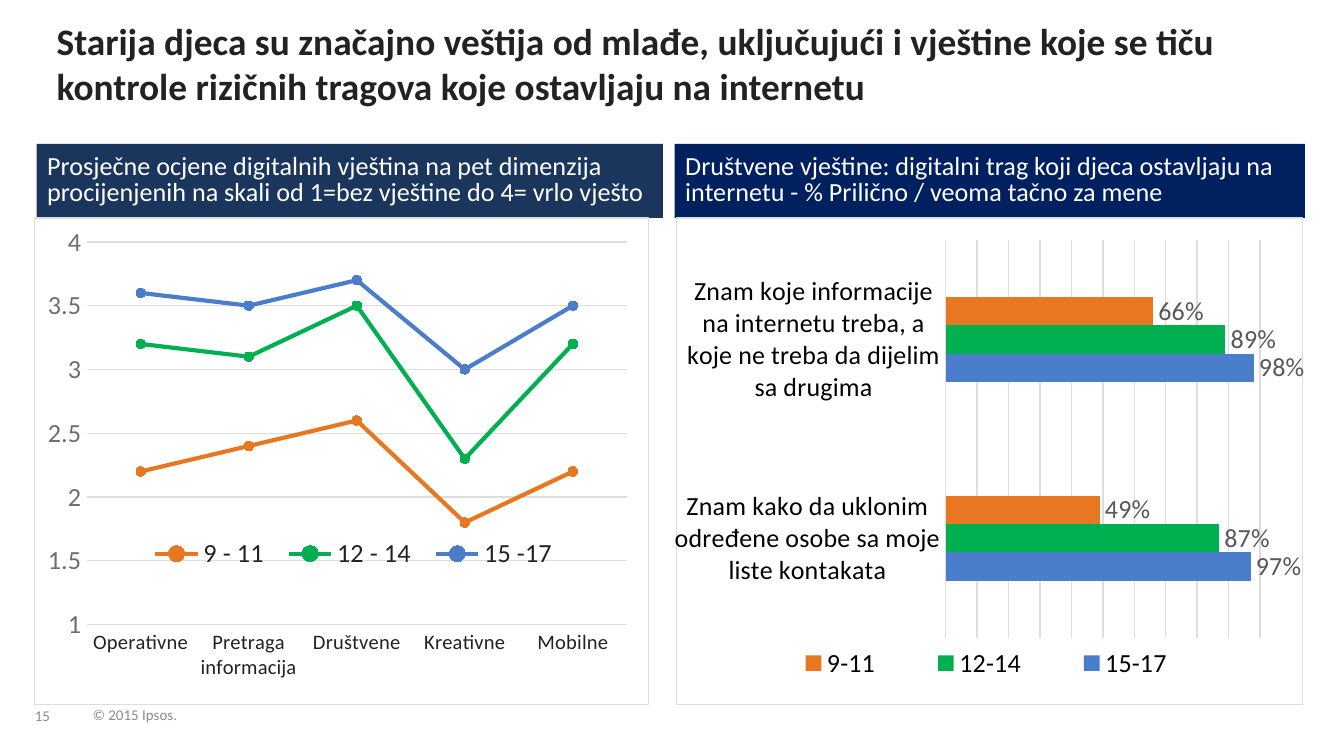
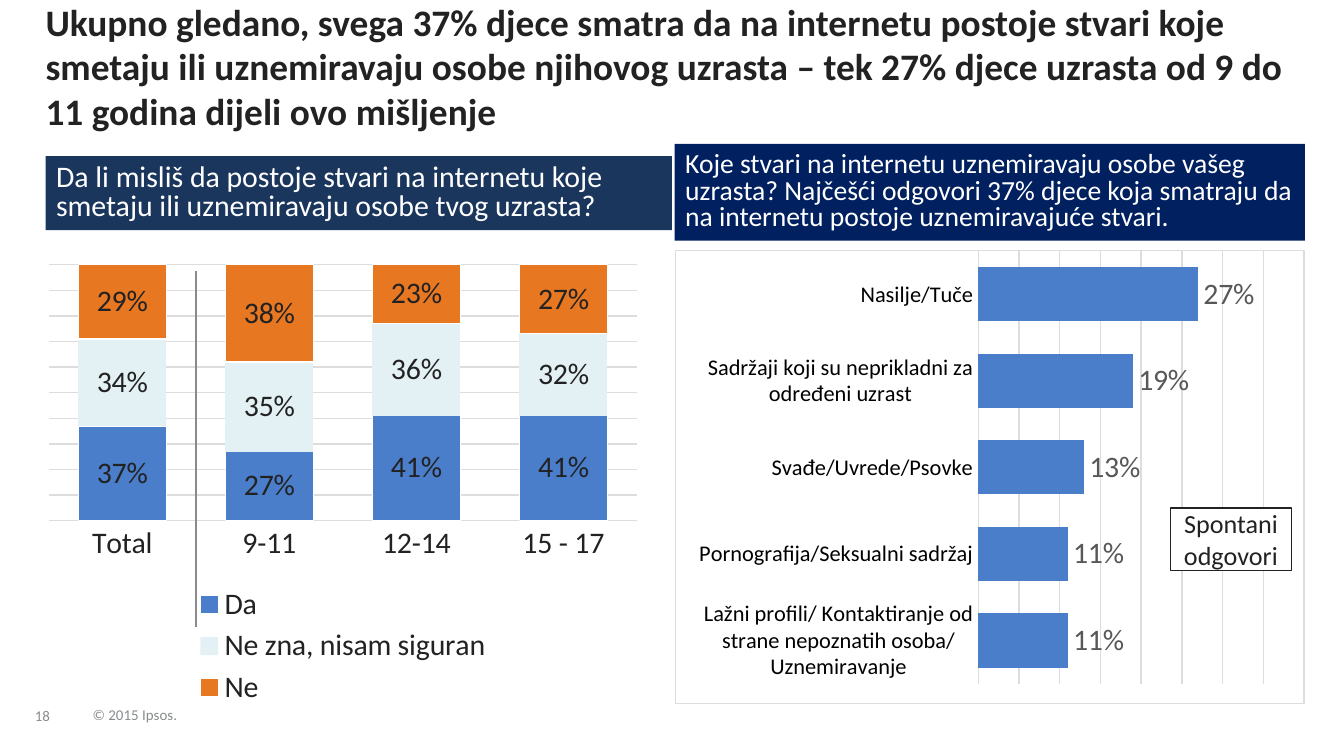
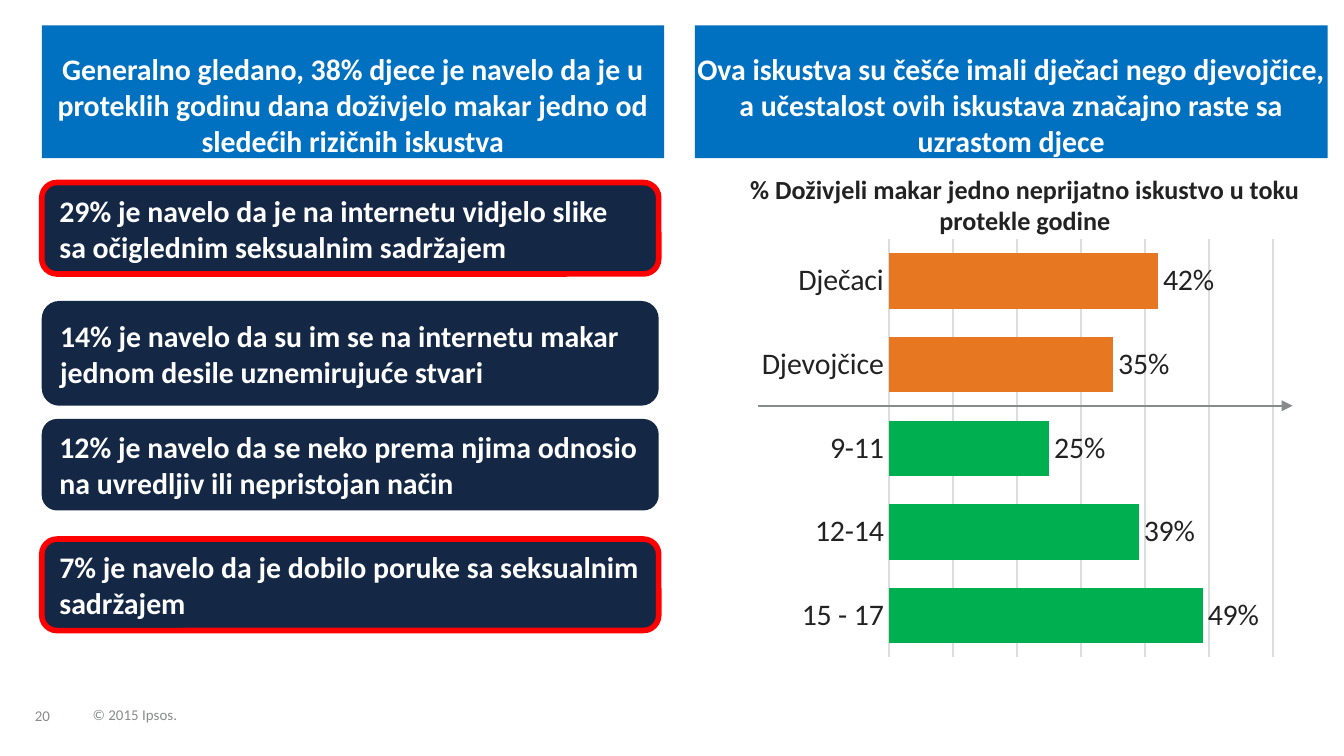
from typing import NamedTuple

from lxml import etree
from pptx import Presentation
from pptx.chart.data import CategoryChartData
from pptx.dml.color import RGBColor
from pptx.enum.chart import XL_CHART_TYPE, XL_LABEL_POSITION, XL_LEGEND_POSITION, XL_MARKER_STYLE, XL_TICK_MARK
from pptx.enum.shapes import MSO_CONNECTOR, MSO_SHAPE
from pptx.enum.text import MSO_ANCHOR, MSO_AUTO_SIZE, PP_ALIGN
from pptx.oxml import parse_xml
from pptx.oxml.ns import nsdecls, qn
from pptx.util import Cm, Pt

INK = RGBColor(0x22, 0x22, 0x23)
BLACK = RGBColor(0x00, 0x00, 0x00)
WHITE = RGBColor(0xFF, 0xFF, 0xFF)
GREY = RGBColor(0x88, 0x8B, 0x8D)
AXIS_GREY = RGBColor(0x6E, 0x6E, 0x71)
LABEL_GREY = RGBColor(0x58, 0x58, 0x5B)
GRID = RGBColor(0xDD, 0xDD, 0xDE)
STEEL = RGBColor(0x1B, 0x36, 0x5D)
NAVY = RGBColor(0x00, 0x20, 0x60)
CARD = RGBColor(0x14, 0x28, 0x46)
SKY = RGBColor(0x00, 0x70, 0xC0)
RED = RGBColor(0xFF, 0x00, 0x00)
ORANGE = RGBColor(0xE8, 0x77, 0x22)
GREEN = RGBColor(0x00, 0xB0, 0x50)
BLUE = RGBColor(0x4A, 0x7E, 0xCA)
PALE = RGBColor(0xE3, 0xF0, 0xF4)

FONT = "Calibri"
PERCENT = r"0\%"
COMPARISON = 4
LEFT_BODY, RIGHT_BODY = 1, 3
TOP, MIDDLE, BOTTOM = MSO_ANCHOR.TOP, MSO_ANCHOR.MIDDLE, MSO_ANCHOR.BOTTOM
LEFT, CENTER = PP_ALIGN.LEFT, PP_ALIGN.CENTER
NO_FIT = MSO_AUTO_SIZE.NONE
RECT, ROUNDED = MSO_SHAPE.RECTANGLE, MSO_SHAPE.ROUNDED_RECTANGLE
STRAIGHT = MSO_CONNECTOR.STRAIGHT
LINE, BARS = XL_CHART_TYPE.LINE_MARKERS, XL_CHART_TYPE.BAR_CLUSTERED
STACKED = XL_CHART_TYPE.COLUMN_STACKED_100
OUTSIDE, INSIDE = XL_LABEL_POSITION.OUTSIDE_END, XL_LABEL_POSITION.CENTER
LEGEND_BOTTOM = XL_LEGEND_POSITION.BOTTOM
CIRCLE = XL_MARKER_STYLE.CIRCLE
NO_TICK = XL_TICK_MARK.NONE


class Box(NamedTuple):
    x: float
    y: float
    w: float
    h: float

    def inner(self, dx, dy, w, h):
        return Box(self.x + dx, self.y + dy, w, h)

    def below(self, dy):
        return Box(self.x, self.y + dy, self.w, self.h - dy)

    def emu(self):
        return [Cm(v) for v in self]


def set_font(font, size, color, bold=False):
    font.name, font.size, font.bold = FONT, Pt(size), bold
    font.color.rgb = color


def write(shape, text, size=16, color=INK, bold=False, align=LEFT, anchor=TOP,
          spacing=1.0, insets=(0, 0, 0, 0), wrap=True):
    tf = shape.text_frame
    tf.word_wrap, tf.auto_size, tf.vertical_anchor = wrap, NO_FIT, anchor
    tf.margin_left, tf.margin_top, tf.margin_right, tf.margin_bottom = map(Cm, insets)
    p = tf.paragraphs[0]
    p.alignment, p.line_spacing, p.space_before = align, spacing, Pt(0)
    r = p.add_run()
    r.text = text
    set_font(r.font, size, color, bold)


def place(ph, box):
    ph.left, ph.top, ph.width, ph.height = box.emu()
    return ph


def paint(shape, color):
    shape.fill.solid()
    shape.fill.fore_color.rgb = color


def add_block(s, kind, box, fill, line=None, width=1.0):
    sp = s.shapes.add_shape(kind, *box.emu())
    sp.shadow.inherit = False
    paint(sp, fill)
    if line is None:
        sp.line.fill.background()
    else:
        sp.line.color.rgb, sp.line.width = line, Pt(width)
    return sp


def add_rule(s, x1, y1, x2, y2, arrow=False):
    line = s.shapes.add_connector(STRAIGHT, Cm(x1), Cm(y1), Cm(x2), Cm(y2))
    line.line.color.rgb, line.line.width = GREY, Pt(1)
    if arrow:
        etree.SubElement(line.line._get_or_add_ln(), qn("a:tailEnd"), type="triangle")
    etree.SubElement(line._element.spPr, qn("a:effectLst"))


def add_footer(s, number):
    for box, text in ((Box(0.66, 13.03, 0.86, 0.66), str(number)),
                      (Box(1.75, 13.21, 1.93, 0.46), "© 2015 Ipsos.")):
        write(s.shapes.add_textbox(*box.emu()), text, size=8, color=GREY,
              anchor=BOTTOM, spacing=0.85, wrap=False)


def add_title(s, box, text):
    write(place(s.shapes.title, box), text, size=20, bold=True, anchor=BOTTOM)


def add_band(s, idx, box, text, fill, size=14):
    ph = place(s.placeholders[idx], box)
    paint(ph, fill)
    write(ph, text, size=size, color=WHITE, anchor=MIDDLE, spacing=0.8,
          insets=(0.2, 0, 0.08, 0))


def add_headline(ph, box, text):
    paint(place(ph, box), SKY)
    write(ph, text, color=WHITE, bold=True, align=CENTER, anchor=BOTTOM)


def drop_empty(s):
    for ph in list(s.placeholders):
        if not ph.text_frame.text:
            ph._element.getparent().remove(ph._element)


def set_layout(parent, index, frame, inner=False):
    for old in parent.findall(qn("c:layout")):
        parent.remove(old)
    target = '<c:layoutTarget val="inner"/>' if inner else ""
    modes = '<c:xMode val="edge"/><c:yMode val="edge"/>'
    sizes = "".join(f'<c:{k} val="{v}"/>' for k, v in zip("xywh", frame))
    parent.insert(index, parse_xml(
        f'<c:layout {nsdecls("c")}><c:manualLayout>{target}{modes}{sizes}'
        f'</c:manualLayout></c:layout>'))


def add_frame(chart):
    chart.element.find(qn("c:chart")).addnext(parse_xml(
        f'<c:spPr {nsdecls("c", "a")}><a:solidFill><a:srgbClr val="{WHITE}"/></a:solidFill>'
        f'<a:ln w="9525"><a:solidFill><a:srgbClr val="{GRID}"/></a:solidFill></a:ln></c:spPr>'))


def thin(line, color=GRID):
    line.color.rgb, line.width = color, Pt(0.75)


def add_chart(s, kind, box, cats, series, plot, scale, cat_size=16, cat_color=INK,
              legend=None, legend_size=14, legend_color=INK, framed=True):
    data = CategoryChartData()
    data.categories = cats
    for name, values, _ in series:
        data.add_series(name, values)
    chart = s.shapes.add_chart(kind, *box.emu(), data).chart
    chart.has_title = False
    set_font(chart.font, 10, INK)
    chart.has_legend = legend is not None
    if legend:
        chart.legend.position = LEGEND_BOTTOM
        chart.legend.include_in_layout = False
        set_font(chart.legend.font, legend_size, legend_color)
        set_layout(chart.element.find(".//" + qn("c:legend")), 1, legend)
    set_layout(chart.element.find(".//" + qn("c:plotArea")), 0, plot, inner=True)
    if framed:
        add_frame(chart)

    cat, val = chart.category_axis, chart.value_axis
    for axis in (cat, val):
        axis.major_tick_mark = axis.minor_tick_mark = NO_TICK
    set_font(cat.tick_labels.font, cat_size, cat_color)
    thin(cat.format.line)
    val.minimum_scale, val.maximum_scale, val.major_unit = scale
    val.has_major_gridlines = True
    thin(val.major_gridlines.format.line)

    chart.plots[0].vary_by_categories = False
    for ser, (_, _, color) in zip(chart.plots[0].series, series):
        if kind == LINE:
            ser.smooth = False
            ser.format.line.color.rgb, ser.format.line.width = color, Pt(2.25)
            ser.marker.style, ser.marker.size = CIRCLE, 5
            paint(ser.marker.format, color)
            ser.marker.format.line.color.rgb = color
        else:
            paint(ser.format, color)
    return chart


def label_bars(chart, gap, size, color, position=OUTSIDE, overlap=0):
    chart.value_axis.visible = False
    plot = chart.plots[0]
    plot.gap_width, plot.overlap = gap, overlap
    for ser in plot.series:
        labels = ser.data_labels
        labels.show_value, labels.position = True, position
        labels.number_format, labels.number_format_is_linked = PERCENT, False
        set_font(labels.font, size, color)


def skills_panel(s, box):
    add_band(s, LEFT_BODY, box.inner(0.05, 0, 11.84, 1.4),
             "Prosječne ocjene digitalnih vještina na pet dimenzija procijenjenih "
             "na skali od 1=bez vještine do 4= vrlo vješto", STEEL)
    chart = add_chart(
        s, LINE, box.below(1.39),
        ["Operativne", "Pretraga informacija", "Društvene", "Kreativne", "Mobilne"],
        [("9 - 11", (2.2, 2.4, 2.6, 1.8, 2.2), ORANGE),
         ("12 - 14", (3.2, 3.1, 3.5, 2.3, 3.2), GREEN),
         ("15 -17", (3.6, 3.5, 3.7, 3, 3.5), BLUE)],
        plot=(0.085, 0.049, 0.88, 0.787), scale=(1, 4, 0.5), cat_size=11,
        legend=(0.17, 0.65, 0.7, 0.08))
    axis = chart.value_axis
    set_font(axis.tick_labels.font, 14, AXIS_GREY)
    axis.tick_labels.number_format = "General"
    axis.tick_labels.number_format_is_linked = False
    axis.format.line.fill.background()


def footprint_panel(s, box):
    add_band(s, RIGHT_BODY, box.inner(0, 0, box.w, 1.4),
             "Društvene vještine: digitalni trag koji djeca ostavljaju na internetu "
             "- % Prilično / veoma tačno za mene", NAVY)
    chart = add_chart(
        s, BARS, box.below(1.39),
        ["Znam kako da uklonim određene osobe sa moje liste kontakata",
         "Znam koje informacije na internetu treba, a koje ne treba da dijelim sa drugima"],
        [("15-17", (97, 98), BLUE), ("12-14", (87, 89), GREEN), ("9-11", (49, 66), ORANGE)],
        plot=(0.43, 0.045, 0.502, 0.818), scale=(0, 100, 10), cat_size=14, cat_color=BLACK,
        legend=(0.12, 0.87, 0.75, 0.09), legend_color=BLACK)
    label_bars(chart, 400, 14, LABEL_GREY)


def opinion_panel(s, box):
    add_band(s, LEFT_BODY, box.inner(0.17, 0, 11.84, 1.4),
             "Da li misliš da postoje stvari na internetu koje smetaju ili uznemiravaju "
             "osobe tvog uzrasta?", STEEL, size=16)
    chart = add_chart(
        s, STACKED, box.below(1.88), ["Total", "9-11", "12-14", "15 - 17"],
        [("Da", (37, 27, 41, 41), BLUE),
         ("Ne zna, nisam siguran", (34, 35, 36, 32), PALE),
         ("Ne", (29, 38, 23, 27), ORANGE)],
        plot=(0.02, 0.02, 0.96, 0.557), scale=(0, 1, 0.1),
        legend=(0.26, 0.71, 0.48, 0.28), legend_size=16, framed=False)
    label_bars(chart, 67, 16, INK, position=INSIDE, overlap=100)
    yes, _, no = chart.plots[0].series
    for ser in (yes, no):
        thin(ser.format.line, WHITE)
    x = box.x + 3.02
    add_rule(s, x, box.y + 2.18, x, box.y + 8.91)


def upsetting_panel(s, box):
    add_band(s, RIGHT_BODY, box.inner(0, 0, box.w, 1.83),
             "Koje stvari na internetu uznemiravaju osobe vašeg uzrasta? Najčešći odgovori "
             "37% djece koja smatraju da na internetu postoje uznemiravajuće stvari.",
             NAVY, size=14.8)
    chart = add_chart(
        s, BARS, box.below(2),
        ["Lažni profili/ Kontaktiranje od strane nepoznatih osoba/ Uznemiravanje",
         "Pornografija/Seksualni sadržaj", "Svađe/Uvrede/Psovke",
         "Sadržaji koji su neprikladni za određeni uzrast", "Nasilje/Tuče"],
        [("Udio", (11, 11, 13, 19, 27), BLUE)],
        plot=(0.482, 0.002, 0.518, 0.955), scale=(0, 40, 5), cat_size=12, cat_color=BLACK)
    label_bars(chart, 60, 16, LABEL_GREY)
    note = add_block(s, RECT, box.inner(9.37, 6.88, 2.29, 1.19), WHITE, INK, 0.75)
    write(note, "Spontani odgovori", size=14, align=CENTER)


def risk_column(s, box):
    add_headline(s.shapes.title, box.inner(0, 0, 11.76, 2.51),
                 "Generalno gledano, 38% djece je navelo da je u proteklih godinu dana "
                 "doživjelo makar jedno od sledećih rizičnih iskustva")
    cards = (
        (2.97, 1.73, RED, "29% je navelo da je na internetu vidjelo slike sa očiglednim "
                          "seksualnim sadržajem"),
        (5.21, 1.98, None, "14% je navelo da su im se na internetu makar jednom desile "
                           "uznemirujuće stvari"),
        (7.44, 1.73, None, "12% je navelo da se neko prema njima odnosio na uvredljiv "
                           "ili nepristojan način"),
        (9.71, 1.73, RED, "7% je navelo da je dobilo poruke sa seksualnim sadržajem"),
    )
    for dy, h, line, text in cards:
        card = add_block(s, ROUNDED, box.inner(0, dy, 11.66, h), CARD, line, 3)
        write(card, text, color=WHITE, bold=True, anchor=MIDDLE,
              insets=(0.25, 0.13, 0.25, 0.13))


def experience_column(s, box):
    add_headline(s.placeholders[RIGHT_BODY], box.inner(0, 0, box.w, 2.51),
                 "Ova iskustva su češće imali dječaci nego djevojčice, a učestalost ovih "
                 "iskustava značajno raste sa uzrastom djece")
    chart = add_chart(
        s, BARS, box.inner(0.23, 3.84, 11.25, 8.51),
        ["15 - 17", "12-14", "9-11", "Djevojčice", "Dječaci"],
        [("Udio", (49, 39, 25, 35, 42), ORANGE)],
        plot=(0.306, 0.024, 0.645, 0.929), scale=(0, 60, 10), framed=False)
    label_bars(chart, 51, 16, INK)
    for i in range(3):
        paint(chart.plots[0].series[0].points[i].format, GREEN)
    y = box.y + 7.19
    add_rule(s, box.x + 1.2, y, box.x + 11.3, y, arrow=True)
    write(s.shapes.add_textbox(*box.inner(0.54, 2.8, 11.4, 1.19).emu()),
          "% Doživjeli makar jedno neprijatno iskustvo u toku protekle godine",
          size=14, bold=True, align=CENTER)


def skills_slide(s):
    add_title(s, Box(1.07, 0.41, 23.37, 1.63),
              "Starija djeca su značajno veštija od mlađe, uključujući i vještine koje se "
              "tiču kontrole rizičnih tragova koje ostavljaju na internetu")
    skills_panel(s, Box(0.64, 2.72, 11.63, 10.61))
    footprint_panel(s, Box(12.75, 2.72, 11.91, 10.61))


def opinion_slide(s):
    add_title(s, Box(0.86, 0.97, 23.77, 1.55),
              "Ukupno gledano, svega 37% djece smatra da na internetu postoje stvari koje "
              "smetaju ili uznemiravaju osobe njihovog uzrasta – tek 27% djece uzrasta od "
              "9 do 11 godina dijeli ovo mišljenje")
    opinion_panel(s, Box(0.69, 2.95, 11.58, 10.57))
    upsetting_panel(s, Box(12.75, 2.72, 11.91, 10.59))


def risk_slide(s):
    risk_column(s, Box(0.79, 0.48, 11.76, 11.44))
    experience_column(s, Box(13.13, 0.48, 11.96, 12.35))


def main():
    prs = Presentation()
    prs.slide_width, prs.slide_height = Cm(25.4), Cm(14.29)
    for number, build in ((15, skills_slide), (18, opinion_slide), (20, risk_slide)):
        s = prs.slides.add_slide(prs.slide_layouts[COMPARISON])
        add_footer(s, number)
        build(s)
        drop_empty(s)
    prs.save("out.pptx")


if __name__ == "__main__":
    main()
